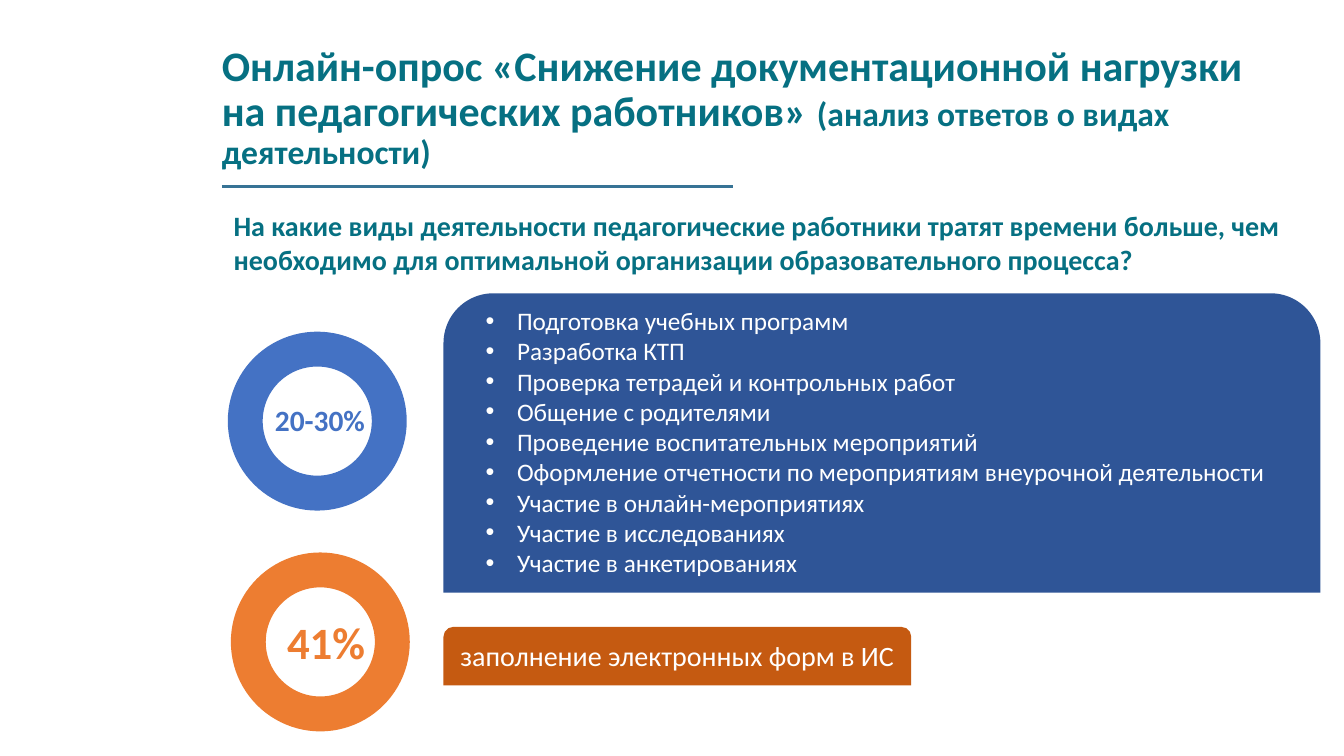
from lxml.etree import SubElement
from pptx import Presentation
from pptx.dml.color import RGBColor
from pptx.enum.shapes import MSO_CONNECTOR, MSO_SHAPE
from pptx.enum.text import MSO_ANCHOR, PP_ALIGN
from pptx.oxml.ns import qn
from pptx.util import Pt

TEAL, RULE, WHITE = "067082", "377395", "FFFFFF"
BLUE, ORANGE = "4472C4", "ED7D31"
DARK_BLUE, DARK_ORANGE = "2F5597", "C55A11"

ACTIVITIES = [
    "Подготовка учебных программ",
    "Разработка КТП",
    "Проверка тетрадей и контрольных работ",
    "Общение с родителями",
    "Проведение воспитательных мероприятий",
    "Оформление отчетности по мероприятиям внеурочной деятельности",
    "Участие в онлайн-мероприятиях",
    "Участие в исследованиях",
    "Участие в анкетированиях",
]


def color(hex_value):
    return RGBColor.from_string(hex_value)


def points(*lengths):
    return [Pt(length) for length in lengths]


def style(font, size, hex_value, bold=False):
    values = {"name": "Calibri", "size": Pt(size), "bold": bold}
    for key, value in values.items():
        setattr(font, key, value)
    font.color.rgb = color(hex_value)


def add_title(slide):
    title = slide.shapes.title
    box = dict(zip(("left", "top", "width", "height"), points(151.2, 25.2, 769, 104.4)))
    for key, value in box.items():
        setattr(title, key, value)
    title.text_frame.vertical_anchor = MSO_ANCHOR.MIDDLE
    paragraph = title.text_frame.paragraphs[0]
    paragraph.alignment = PP_ALIGN.LEFT
    paragraph.line_spacing = 0.9
    for text, size in (
        ("Онлайн-опрос «Снижение документационной нагрузки на педагогических работников» ", 30),
        ("(анализ ответов о видах деятельности)", 24),
    ):
        run = paragraph.add_run()
        run.text = text
        style(run.font, size, TEAL, bold=True)


def add_rule(slide, start, end, y):
    rule = slide.shapes.add_connector(MSO_CONNECTOR.STRAIGHT, *points(start, y, end, y))
    rule.line.color.rgb = color(RULE)
    rule.line.width = Pt(2.5)
    SubElement(rule._element.spPr, qn("a:effectLst"))


def add_filled(slide, preset, box, fill, adjustment=None):
    shape = slide.shapes.add_shape(preset, *points(*box))
    shape.shadow.inherit = False
    shape.fill.solid()
    shape.fill.fore_color.rgb = color(fill)
    shape.line.fill.background()
    if adjustment is not None:
        shape.adjustments[0] = adjustment


def add_bullet(paragraph):
    properties = paragraph._p.get_or_add_pPr()
    indent = Pt(22.5)
    properties.set("marL", str(indent))
    properties.set("indent", str(-indent))
    SubElement(properties, qn("a:buFont"), typeface="Arial")
    SubElement(properties, qn("a:buChar"), char="•")


def add_text(slide, box, lines, size, hex_value, bold=False, wrap=True,
             align=PP_ALIGN.LEFT, bulleted=False):
    frame = slide.shapes.add_textbox(*points(*box)).text_frame
    frame.word_wrap = wrap
    frame.text = "\n".join(lines)
    for paragraph in frame.paragraphs:
        paragraph.alignment = align
        if bulleted:
            add_bullet(paragraph)
        style(paragraph.runs[0].font, size, hex_value, bold)


def main():
    presentation = Presentation()
    presentation.slide_width, presentation.slide_height = points(960, 540)
    slide = presentation.slides.add_slide(presentation.slide_layouts[5])

    add_rule(slide, 158.4, 523.4, 133.2)
    add_title(slide)
    add_text(slide, (159.8, 145.4, 789, 80),
             ["На какие виды деятельности педагогические работники тратят времени больше, "
              "чем необходимо для оптимальной организации образовательного процесса?"],
             20, TEAL, bold=True)

    for left, top, fill in ((162.7, 236.9, BLUE), (164.9, 394.6, ORANGE)):
        add_filled(slide, MSO_SHAPE.DONUT, (left, top, 127.8, 127.8), fill, 0.195)
    for top, width, height, fill in (
        (209.5, 626.4, 213.8, DARK_BLUE),
        (447.8, 334.1, 41.8, DARK_ORANGE),
    ):
        add_filled(slide, MSO_SHAPE.ROUND_2_SAME_RECTANGLE,
                   (316.8, top, width, height), fill)

    add_text(slide, (321.8, 452.2, 328.3, 31.7), ["заполнение электронных форм в ИС"],
             20, WHITE, wrap=False)
    for box, share, size, hex_value, wrap in (
        ((188.6, 283.7, 79.9, 32.4), "20-30%", 21, BLUE, True),
        ((197.3, 435.6, 71.3, 46.1), "41%", 32, ORANGE, False),
    ):
        add_text(slide, box, [share], size, hex_value, bold=True, wrap=wrap,
                 align=PP_ALIGN.CENTER)
    add_text(slide, (339.8, 214.6, 609.8, 203.8), ACTIVITIES, 18, WHITE, bulleted=True)

    presentation.save("out.pptx")


if __name__ == "__main__":
    main()
